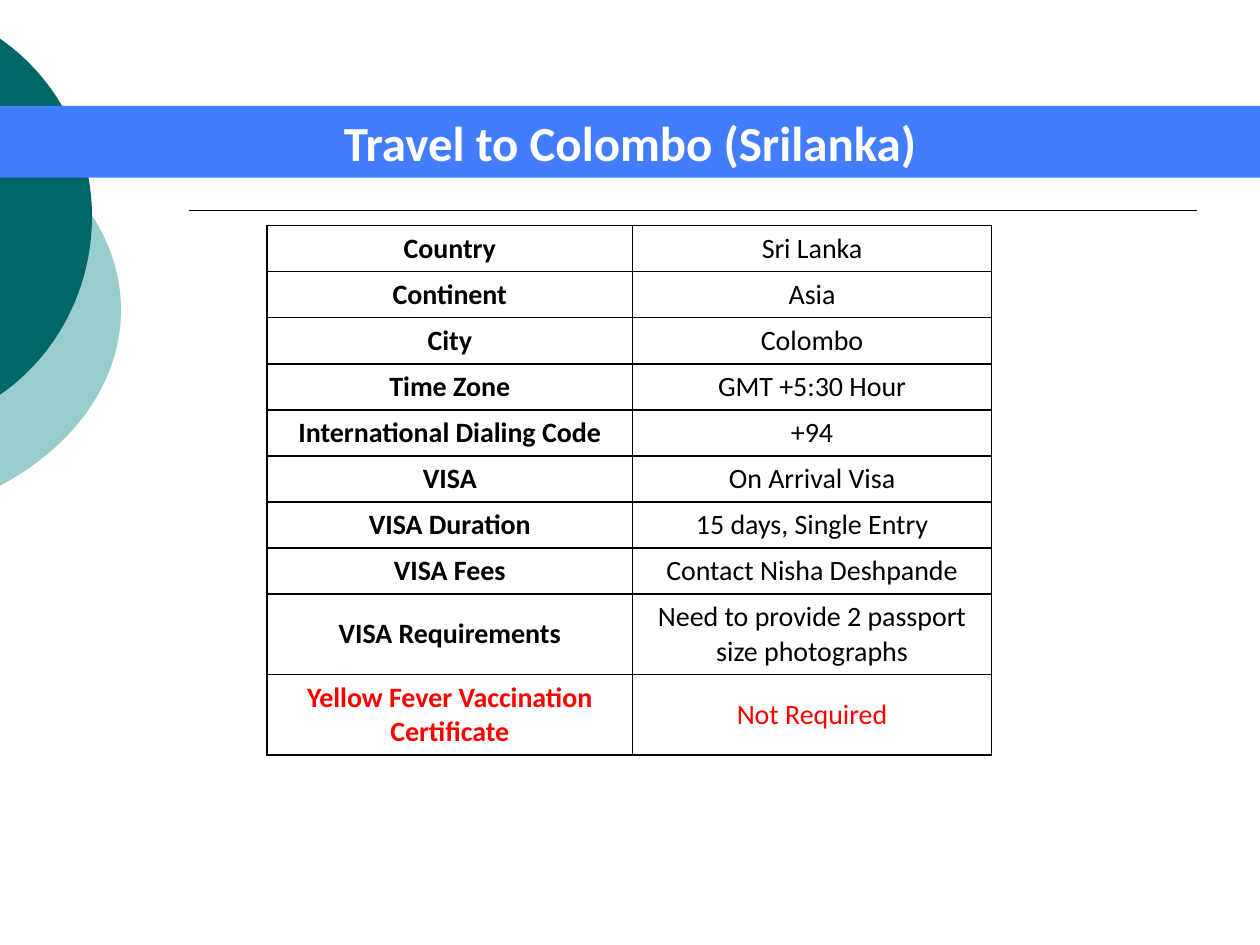
from lxml import etree
from pptx import Presentation
from pptx.dml.color import RGBColor
from pptx.enum.shapes import MSO_CONNECTOR, MSO_SHAPE
from pptx.enum.text import MSO_ANCHOR, PP_ALIGN
from pptx.oxml.ns import qn
from pptx.util import Inches, Pt

LINE = MSO_CONNECTOR.STRAIGHT
RECT = MSO_SHAPE.RECTANGLE
MIDDLE = MSO_ANCHOR.MIDDLE
CENTER = PP_ALIGN.CENTER

BLACK = RGBColor(0x00, 0x00, 0x00)
WHITE = RGBColor(0xFF, 0xFF, 0xFF)
RED = RGBColor(0xFF, 0x00, 0x00)
BLUE = RGBColor(0x43, 0x7D, 0xFF)
TEAL = RGBColor(0x00, 0x66, 0x66)
PALE_TEAL = RGBColor(0x99, 0xCC, 0xCC)

FONT = "Calibri"
COL_WIDTHS = (2.9, 2.85)
ROW_HEIGHT = 0.36
TALL_ROW_HEIGHT = 0.63
CELL_PADDING = Pt(3.4)

FACTS = [
    ("Country", "Sri Lanka"),
    ("Continent", "Asia"),
    ("City", "Colombo"),
    ("Time Zone", "GMT +5:30 Hour"),
    ("International Dialing Code", "+94"),
    ("VISA", "On Arrival Visa"),
    ("VISA Duration", "15 days, Single Entry"),
    ("VISA Fees", "Contact Nisha Deshpande"),
    ("VISA Requirements", "Need to provide 2 passport size photographs"),
    ("Yellow Fever Vaccination Certificate", "Not Required"),
]
TALL_ROWS = FACTS[-2:]


def format_text(tf, size, color, bold):
    tf.vertical_anchor = MIDDLE
    p = tf.paragraphs[0]
    p.alignment = CENTER
    font = p.runs[0].font
    font.name = FONT
    font.size = Pt(size)
    font.bold = bold
    font.color.rgb = color


def add_edge_disc(s, frame, upper, color):
    left, top, width, height = frame
    middle = upper[-1][1]
    lower = [(x, 2 * middle - y) for x, y in reversed(upper[:-1])]
    builder = s.shapes.build_freeform(0, 0)
    builder.add_line_segments([(Inches(width), 0), (Inches(width), Inches(height))])
    sp = builder.convert_to_shape(Inches(left), Inches(top))
    path = sp._element.spPr.find(".//" + qn("a:path"))
    for child in list(path):
        path.remove(child)
    segments = (("moveTo", upper[:1]), ("cubicBezTo", upper[1:]), ("cubicBezTo", lower))
    for tag, points in segments:
        segment = etree.SubElement(path, qn(f"a:{tag}"))
        for x, y in points:
            etree.SubElement(segment, qn("a:pt"), x=str(Inches(x - left)), y=str(Inches(y - top)))
    etree.SubElement(path, qn("a:close"))
    sp.shadow.inherit = False
    sp.fill.solid()
    sp.fill.fore_color.rgb = color
    sp.line.fill.background()


def add_rule(s, left, right, y):
    line = s.shapes.add_connector(LINE, Inches(left), Inches(y), Inches(right), Inches(y))
    line.line.color.rgb = BLACK
    line.line.width = Pt(1)
    etree.SubElement(line._element.spPr, qn("a:effectLst"))


def add_title_band(s, top, width, height, text):
    sp = s.shapes.add_shape(RECT, 0, Inches(top), width, Inches(height))
    sp.shadow.inherit = False
    sp.fill.solid()
    sp.fill.fore_color.rgb = BLUE
    sp.line.fill.background()
    sp.text_frame.text = text
    format_text(sp.text_frame, 28, WHITE, True)


def add_borders(cell):
    tcPr = cell._tc.get_or_add_tcPr()
    for i, side in enumerate(("lnL", "lnR", "lnT", "lnB")):
        ln = etree.Element(qn(f"a:{side}"), w=str(Pt(1)))
        fill = etree.SubElement(ln, qn("a:solidFill"))
        etree.SubElement(fill, qn("a:srgbClr"), val=str(BLACK))
        tcPr.insert(i, ln)


def add_fact_table(s, left, top):
    heights = [TALL_ROW_HEIGHT if fact in TALL_ROWS else ROW_HEIGHT for fact in FACTS]
    table = s.shapes.add_table(
        len(FACTS), len(COL_WIDTHS), Inches(left), Inches(top),
        Inches(sum(COL_WIDTHS)), Inches(sum(heights)),
    ).table
    table.first_row = False
    table.horz_banding = False
    for col, width in zip(table.columns, COL_WIDTHS):
        col.width = Inches(width)
    for r, (fact, height) in enumerate(zip(FACTS, heights)):
        table.rows[r].height = Inches(height)
        color = RED if fact == FACTS[-1] else BLACK
        for c, text in enumerate(fact):
            cell = table.cell(r, c)
            cell.fill.background()
            cell.text = text
            cell.vertical_anchor = MIDDLE
            cell.margin_top = cell.margin_bottom = CELL_PADDING
            format_text(cell.text_frame, 16, color, c == 0)
            add_borders(cell)


def main():
    prs = Presentation()
    prs.slide_width = Inches(10)
    prs.slide_height = Inches(7.5)
    s = prs.slides.add_slide(prs.slide_layouts[6])
    pale_arc = [(-0.01, 1.06), (0.6, 1.38), (0.96, 1.9), (0.96, 2.46)]
    teal_arc = [(-0.01, 0.3), (0.46, 0.62), (0.73, 1.16), (0.73, 1.72)]
    add_edge_disc(s, (-3.54, 0.75, 4.5, 3.42), pale_arc, PALE_TEAL)
    add_edge_disc(s, (-2.65, 0, 3.38, 3.45), teal_arc, TEAL)
    add_rule(s, 1.5, 9.5, 1.67)
    add_title_band(s, 0.84, prs.slide_width, 0.57, "Travel to Colombo (Srilanka)")
    add_fact_table(s, 2.12, 1.79)
    prs.save("out.pptx")


if __name__ == "__main__":
    main()
